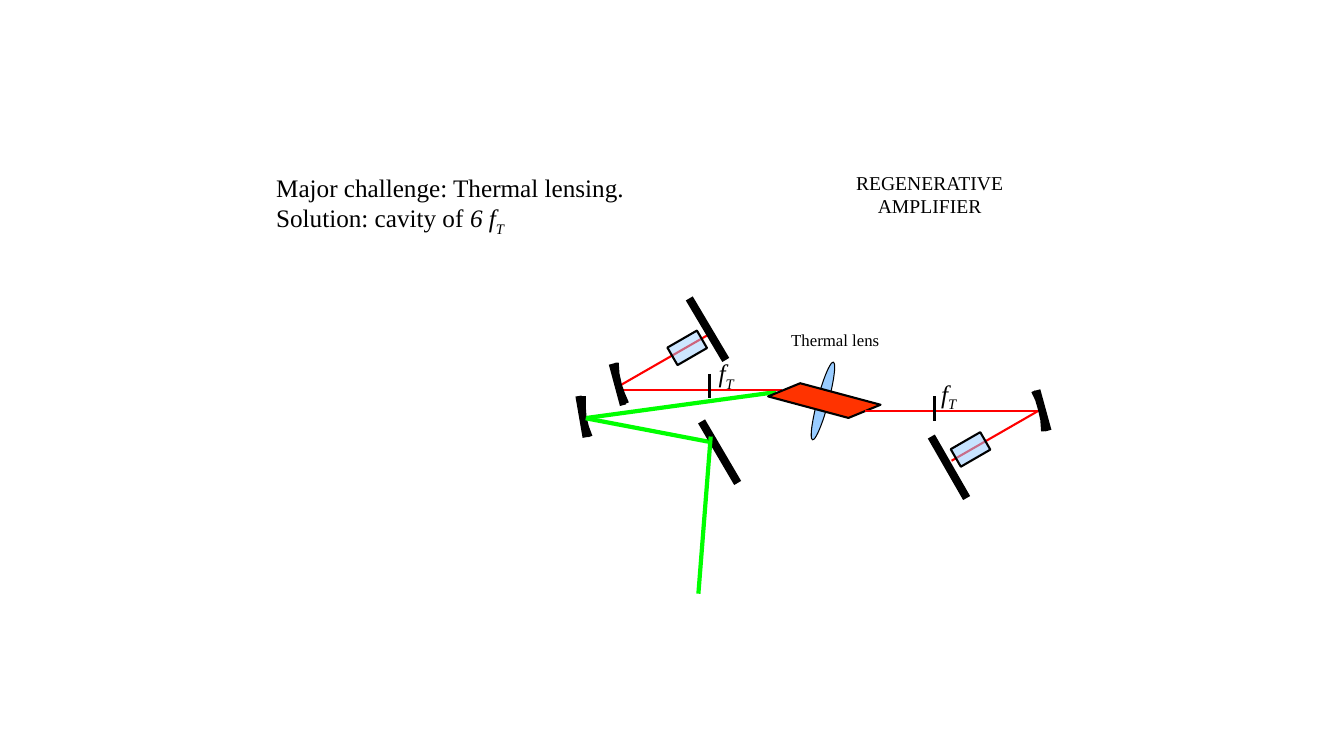
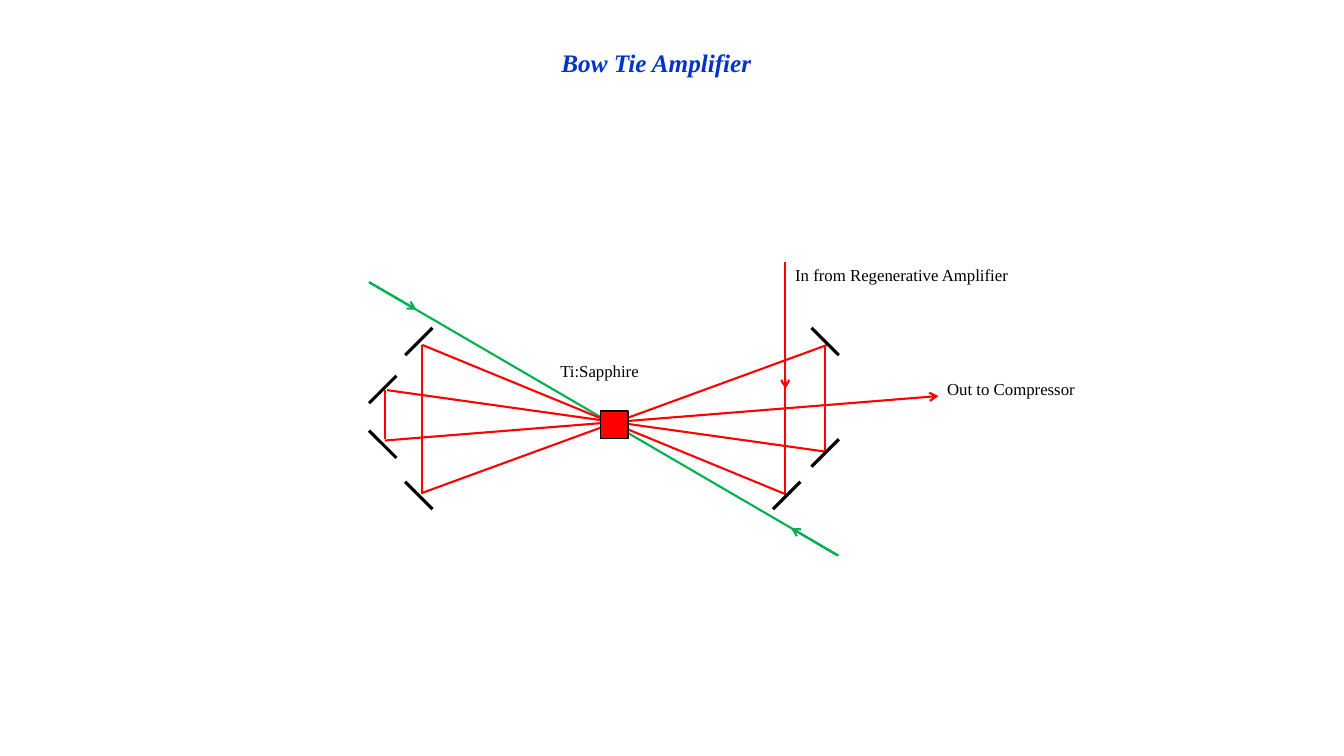
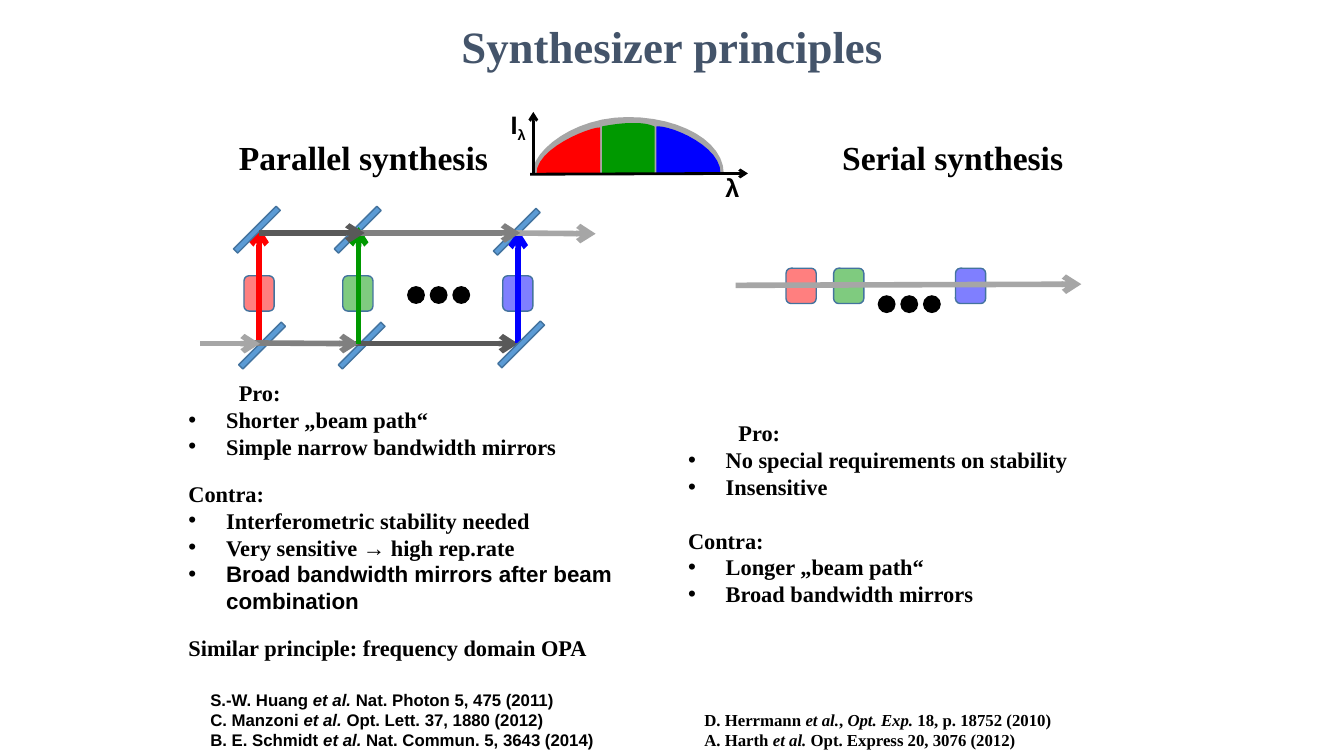
"""Builds three slides on laser amplifiers and waveform synthesis."""
from lxml.etree import SubElement
from pptx import Presentation
from pptx.dml.color import RGBColor
from pptx.enum.shapes import MSO_CONNECTOR, MSO_SHAPE
from pptx.enum.text import MSO_ANCHOR, PP_ALIGN
from pptx.oxml.ns import qn
from pptx.util import Cm, Pt

SERIF, SANS = "Times New Roman", "Arial"
BLACK, RED, GREEN, BLUE = "000000", "FF0000", "009900", "0000FF"
PUMP, PUMP_DARK, PALE_BLUE = "00FF00", "00B050", "99CCFF"
LIGHT, MIDDLE, DARK = "A6A6A6", "808080", "595959"
PLATE, PLATE_EDGE = "5B9BD5", "43739E"
LINE, CURVE = "line", "curve"


def draw(slide, kind, geometry, fill=None, line=None, width=1, alpha=None, turn=0, arrow=False, closed=False):
    """Draw a connector, a freeform or a preset shape, measured in centimetres."""
    if kind == LINE:
        shape = slide.shapes.add_connector(MSO_CONNECTOR.STRAIGHT, *map(Cm, geometry))
    elif kind == CURVE:
        points = [(Cm(x), Cm(y)) for x, y in geometry]
        builder = slide.shapes.build_freeform(*points[0], scale=1.0)
        builder.add_line_segments(points[1:], close=closed)
        shape = builder.convert_to_shape()
    else:
        shape = slide.shapes.add_shape(kind, *map(Cm, geometry))
        shape.rotation = turn
    if fill:
        shape.fill.solid()
        shape.fill.fore_color.rgb = RGBColor.from_string(fill)
        if alpha:
            color = shape._element.spPr.find(".//" + qn("a:srgbClr"))
            SubElement(color, qn("a:alpha"), val=str(alpha * 1000))
    elif kind != LINE:
        shape.fill.background()
    if line:
        shape.line.color.rgb = RGBColor.from_string(line)
        shape.line.width = Pt(width)
    else:
        shape.line.fill.background()
    if arrow:
        SubElement(shape.line._get_or_add_ln(), qn("a:tailEnd"), type="arrow")
    SubElement(shape._element.spPr, qn("a:effectLst"))
    return shape


def write(slide, box, paragraphs, size, color=BLACK, font=SERIF, bold=False, align=PP_ALIGN.LEFT, wrap=False):
    """Write paragraphs of plain text or (text, style) runs; i is italic, _ is subscript."""
    frame = slide.shapes.add_textbox(*map(Cm, box)).text_frame
    frame.word_wrap = wrap
    for index, content in enumerate(paragraphs):
        paragraph = frame.paragraphs[0] if index == 0 else frame.add_paragraph()
        runs = [(content, "")] if isinstance(content, str) else content
        if runs[0][0].startswith("• "):
            runs = [(runs[0][0][2:], "")]
            properties = paragraph._p.get_or_add_pPr()
            properties.set("marL", str(Cm(0.95)))
            properties.set("indent", str(-Cm(0.95)))
            SubElement(properties, qn("a:buFont"), typeface=SANS)
            SubElement(properties, qn("a:buChar"), char="•")
        paragraph.alignment = align
        paragraph.font.size = Pt(size)
        paragraph.font.name = font
        paragraph.font.bold = bold
        paragraph.font.color.rgb = RGBColor.from_string(color)
        for text, style in runs:
            run = paragraph.add_run()
            run.text = text
            if "i" in style:
                run.font.italic = True
            if "_" in style:
                run.font._element.set("baseline", "-25000")
    return frame


presentation = Presentation()
presentation.slide_width, presentation.slide_height = Cm(33.87), Cm(19.05)
regenerative, bow_tie, synthesizer = [
    presentation.slides.add_slide(presentation.slide_layouts[6]) for _ in range(3)
]

slide = regenerative
write(slide, (21.31, 4.17, 4.24, 1.45), ["REGENERATIVE", "AMPLIFIER"], 14, align=PP_ALIGN.CENTER)
write(slide, (6.71, 4.22, 9.37, 1.8), [
    "Major challenge: Thermal lensing.",
    [("Solution: cavity of ", ""), ("6 f", "i"), ("T", "i_")],
], 18)
draw(slide, LINE, (19.56, 9.88, 14.73, 10.54), line=PUMP, width=3)
draw(slide, LINE, (19.71, 9.83, 15.7, 9.83), line=RED, width=1.5)
draw(slide, MSO_SHAPE.OVAL, (20.6, 9.09, 0.28, 2.03), PALE_BLUE, BLACK, 0.75, turn=15)
crystal = draw(slide, MSO_SHAPE.PARALLELOGRAM, (19.38, 9.83, 2.79, 0.53), "FF3300", BLACK, 1.5, turn=15)
crystal.adjustments[0] = 1.31
for beam in [(23.98, 11.61, 26.19, 10.34), (21.79, 10.36, 26.21, 10.36), (15.65, 9.7, 17.86, 8.43)]:
    draw(slide, LINE, beam, line=RED, width=1.5)
for left, top, alpha in [(24.03, 11.07, 54), (16.89, 8.51, 49)]:
    draw(slide, MSO_SHAPE.RECTANGLE, (left, top, 0.86, 0.51), PALE_BLUE, BLACK, 1.5, alpha, turn=330)
for end_mirror in [(24.36, 12.55, 23.47, 11), (18.29, 9.07, 17.37, 7.52)]:
    draw(slide, LINE, end_mirror, line=BLACK, width=5.75)
for back, front in [
    ((26.42, 10.85, 26.14, 9.83), [(26.04, 9.86), (26.14, 10.07), (26.21, 10.31), (26.27, 10.58), (26.29, 10.87)]),
    ((15.7, 10.21, 15.42, 9.17), [(15.8, 10.16), (15.7, 9.93), (15.62, 9.7), (15.56, 9.42), (15.54, 9.14)]),
    ((14.76, 11.02, 14.58, 9.98), [(14.88, 11), (14.79, 10.76), (14.73, 10.52), (14.71, 10.25), (14.71, 9.98)]),
]:
    draw(slide, LINE, back, line=BLACK, width=4.5)
    draw(slide, CURVE, front, line=BLACK, width=3)
write(slide, (19.69, 8.18, 2.74, 0.76), ["Thermal lens"], 12)
for tick, tick_top, left, top in [(17.88, 9.42, 17.86, 8.89), (23.55, 9.98, 23.47, 9.4)]:
    draw(slide, LINE, (tick, tick_top, tick, tick_top + 0.62), line=BLACK, width=1.5)
    write(slide, (left, top, 0.91, 1.02), [[("f", "i"), ("T", "i_")]], 18)
draw(slide, LINE, (17.96, 11.15, 14.76, 10.54), line=PUMP, width=3)
draw(slide, LINE, (18.59, 12.17, 17.68, 10.62), line=BLACK, width=5.75)
draw(slide, LINE, (17.91, 11, 17.6, 14.96), line=PUMP, width=3)

slide = bow_tie
write(slide, (13.9, 1.06, 6, 0.95), [[("Bow Tie Amplifier", "i")]], 18, "0033CC", bold=True)
for color, arrow, beam in [
    (PUMP_DARK, False, (9.3, 7.11, 21.13, 14)),
    (PUMP_DARK, True, (9.3, 7.11, 10.49, 7.8)),
    (PUMP_DARK, True, (21.11, 14, 19.94, 13.31)),
    (RED, False, (19.79, 6.6, 19.79, 12.5)),
    (RED, False, (10.64, 8.69, 19.79, 12.45)),
    (RED, False, (10.64, 8.69, 10.64, 12.45)),
    (RED, False, (10.64, 12.42, 20.85, 8.69)),
    (RED, False, (20.8, 8.69, 20.8, 11.38)),
    (RED, False, (9.75, 9.83, 20.8, 11.38)),
    (RED, False, (9.7, 9.83, 9.7, 11.07)),
    (RED, True, (9.7, 11.1, 23.65, 9.98)),
    (RED, True, (19.79, 6.86, 19.79, 9.8)),
]:
    draw(slide, LINE, beam, line=color, width=1.5, arrow=arrow)
MIRROR = 0.69
for left, top in [(9.3, 10.85), (10.21, 12.14), (20.45, 8.26)]:
    draw(slide, LINE, (left, top, left + MIRROR, top + MIRROR), line=BLACK, width=2.25)
for left, top in [(20.45, 11.07), (9.3, 9.47), (19.48, 12.14), (10.21, 8.26)]:
    draw(slide, LINE, (left, top + MIRROR, left + MIRROR, top), line=BLACK, width=2.25)
draw(slide, MSO_SHAPE.RECTANGLE, (15.14, 10.36, 0.69, 0.69), RED, BLACK)
for left, top, width, label in [
    (13.87, 8.97, 3.48, "Ti:Sapphire"),
    (19.79, 6.55, 8.2, "In from Regenerative Amplifier"),
    (23.62, 9.42, 5.16, "Out to Compressor"),
]:
    write(slide, (left, top, width, 1.14), [label], 12)

slide = synthesizer
title = write(slide, (4.24, 0, 25.4, 2.31), ["Synthesizer principles"], 32, "44546A",
              bold=True, align=PP_ALIGN.CENTER, wrap=True)
title.vertical_anchor = MSO_ANCHOR.MIDDLE
write(slide, (5.77, 3.33, 10, 1.2), ["Parallel synthesis"], 24, bold=True)
write(slide, (18.36, 3.33, 11.3, 1.2), ["Serial synthesis"], 24, bold=True, align=PP_ALIGN.CENTER, wrap=True)
for box, gap, lines in [
    ((4.5, 9.43, 12.6, 7.7), 14.4, [
        "Pro:", "• Shorter „beam path“", "• Simple narrow bandwidth mirrors",
        "Contra:", "• Interferometric stability needed", "• Very sensitive → high rep.rate",
        "• Broad bandwidth mirrors after beam combination",
        "Similar principle: frequency domain OPA",
    ]),
    ((17.09, 10.44, 12.57, 5.2), 19.2, [
        "Pro:", "• No special requirements on stability", "• Insensitive",
        "Contra:", "• Longer „beam path“", "• Broad bandwidth mirrors",
    ]),
]:
    frame = write(slide, box, lines, 16, bold=True, wrap=True)
    frame.paragraphs[0]._p.get_or_add_pPr().set("marL", str(Cm(1.27)))
    for paragraph in frame.paragraphs[1:]:
        if paragraph.text.startswith(("Contra", "Similar")):
            paragraph.space_before = Pt(gap)
        elif paragraph.text.endswith("combination"):
            paragraph.font.name = SANS

for left, color in [(19.81, RED), (21.01, GREEN), (24.08, BLUE)]:
    draw(slide, MSO_SHAPE.ROUNDED_RECTANGLE, (left, 6.76, 0.76, 0.89), color, PLATE_EDGE, alpha=50)
for first, top in [(22.12, 7.44), (10.26, 7.21)]:
    for index in range(3):
        draw(slide, MSO_SHAPE.OVAL, (first + 0.57 * index, top, 0.45, 0.45), BLACK)
draw(slide, LINE, (18.54, 7.19, 27.25, 7.16), line=LIGHT, width=4, arrow=True)

for color, edge, knots, corners in [
    (LIGHT, None, [(13.41, 4.37), (13.44, 3.76), (14.5, 2.95), (15.82, 2.95),
                   (17.17, 2.95), (18.24, 3.58), (18.24, 4.37)], []),
    (RED, RED, [(13.54, 4.39), (13.51, 3.76), (14.86, 3.23), (15.11, 3.23)], [(15.11, 4.37)]),
    (BLUE, BLUE, [(18.14, 4.37), (18.16, 3.73), (16.99, 3.2), (16.56, 3.2)], [(16.56, 4.37)]),
    (GREEN, GREEN, [(16.48, 3.2), (16.28, 3.12), (16.13, 3.12), (15.9, 3.12),
                    (15.7, 3.12), (15.47, 3.15), (15.19, 3.2)], [(15.19, 4.37), (16.48, 4.34)]),
]:
    outline = [knots[0]]
    for start in range(0, len(knots) - 1, 3):
        for step in range(1, 13):
            t = step / 12
            weights = ((1 - t) ** 3, 3 * t * (1 - t) ** 2, 3 * t * t * (1 - t), t ** 3)
            controls = knots[start:start + 4]
            outline.append(tuple(sum(w * point[axis] for w, point in zip(weights, controls)) for axis in (0, 1)))
    draw(slide, CURVE, outline + corners, color, edge, closed=True)
for axis in [(13.36, 4.39, 18.85, 4.37), (13.44, 4.39, 13.44, 2.82)]:
    draw(slide, LINE, axis, line=BLACK, width=2, arrow=True)
write(slide, (18.03, 4.22, 0.86, 1.02), ["λ"], 18, font=SANS, bold=True)
write(slide, (12.62, 2.62, 0.94, 1.02), [[("I", ""), ("λ", "_")]], 18, font=SANS, bold=True)

for left, color in [(6.15, RED), (8.64, GREEN), (12.67, BLUE)]:
    draw(slide, MSO_SHAPE.ROUNDED_RECTANGLE, (left, 6.95, 0.76, 0.89), color, PLATE_EDGE, alpha=50)
for plates, beams in [
    ([(12.95, 5.08), (8.94, 5.03), (9.04, 7.95)],
     [(DARK, (8.81, 8.66, 13.06, 8.66)), (RED, (6.53, 8.66, 6.53, 5.72))]),
    ([(6.53, 7.95)],
     [(MIDDLE, (6.15, 8.64, 9.04, 8.66)), (LIGHT, (5.05, 8.66, 6.55, 8.66)),
      (GREEN, (9.04, 8.66, 9.04, 5.72)), (BLUE, (13.06, 8.64, 13.06, 5.79)),
      (LIGHT, (12.9, 5.87, 15.01, 5.89))]),
    ([(13.06, 7.92), (6.4, 5.03)],
     [(MIDDLE, (9.02, 5.87, 13.11, 5.87)), (DARK, (6.53, 5.87, 9.19, 5.87))]),
]:
    for left, top in plates:
        draw(slide, MSO_SHAPE.RECTANGLE, (left, top, 0.15, 1.52), PLATE, PLATE_EDGE, turn=45)
    for color, beam in beams:
        draw(slide, LINE, beam, line=color, width=4, arrow=True)

write(slide, (17.5, 17.75, 9.35, 1.27), [
    [("D. Herrmann ", ""), ("et al.", "i"), (", ", ""), ("Opt. Exp.", "i"), (" 18, p. 18752 (2010)", "")],
    [("A. Harth ", ""), ("et al. ", "i"), ("Opt. Express 20, 3076 (2012)", "")],
], 12, bold=True, wrap=True)
write(slide, (5.05, 17.25, 11.25, 1.8), [
    [(author, ""), ("et al. ", "i"), (journal, "")] for author, journal in [
        ("S.-W. Huang ", "Nat. Photon 5, 475 (2011)"),
        ("C. Manzoni ", "Opt. Lett. 37, 1880 (2012)"),
        ("B. E. Schmidt ", "Nat. Commun. 5, 3643 (2014)"),
    ]
], 12, font=SANS, bold=True, wrap=True)

presentation.save("out.pptx")
